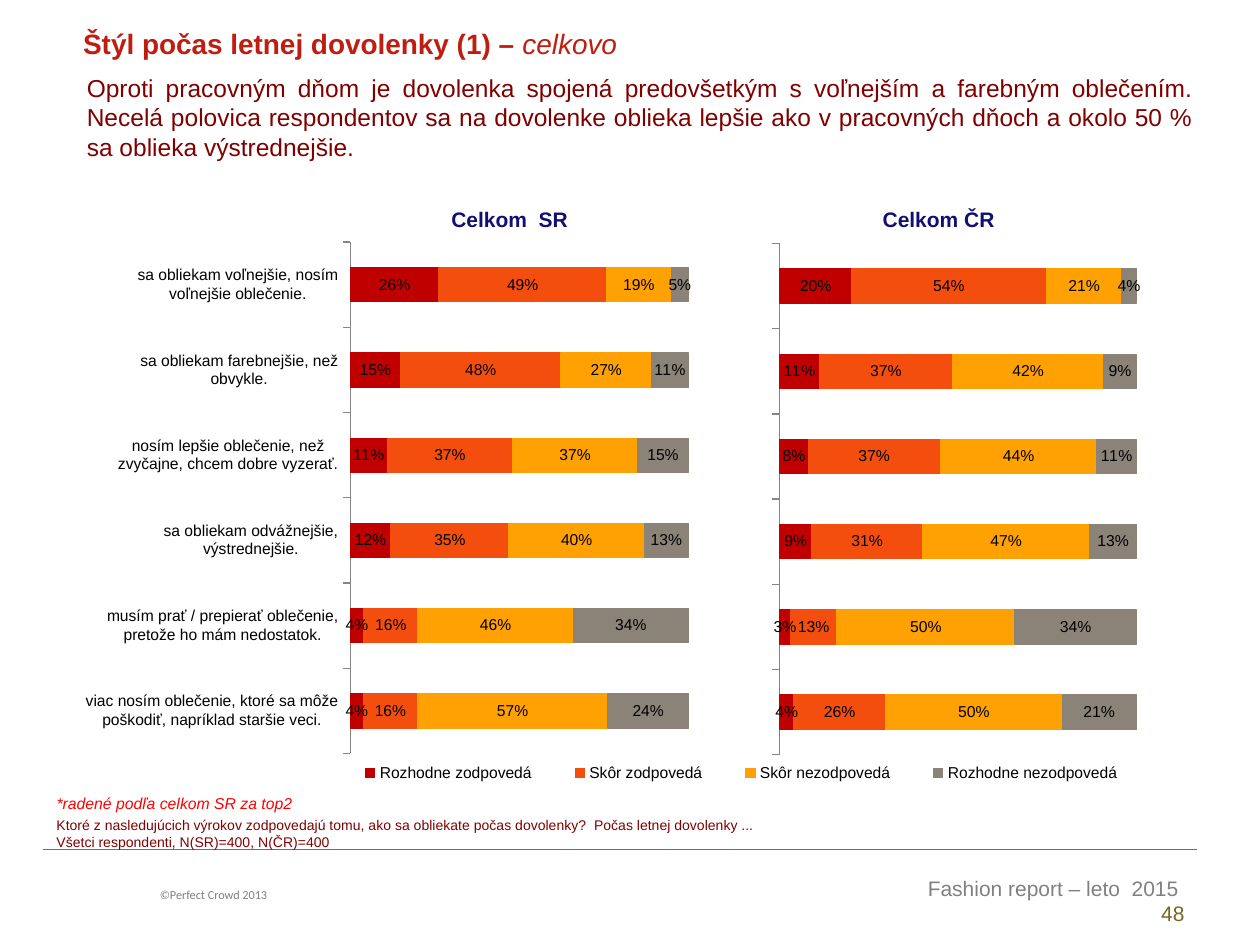
from lxml import etree
from pptx import Presentation
from pptx.chart.data import CategoryChartData
from pptx.dml.color import RGBColor
from pptx.enum.chart import (XL_CHART_TYPE, XL_LABEL_POSITION, XL_LEGEND_POSITION,
                             XL_TICK_LABEL_POSITION, XL_TICK_MARK)
from pptx.enum.shapes import MSO_CONNECTOR
from pptx.enum.text import MSO_ANCHOR, MSO_AUTO_SIZE, PP_ALIGN
from pptx.oxml.ns import qn
from pptx.util import Inches, Pt

LEFT, CENTER, RIGHT, JUSTIFY = (PP_ALIGN.LEFT, PP_ALIGN.CENTER,
                                PP_ALIGN.RIGHT, PP_ALIGN.JUSTIFY)

# Content: each paragraph is a list of (text, size, colour, style) runs
RED, MAROON, NAVY, GREY = "BE1E11", "800000", "120F71", "808080"
TITLE = [[("Štýl počas letnej dovolenky (1) – ", 16, RED, "b"),
          ("celkovo", 16, RED, "i")]]
SUMMARY = [[("Oproti pracovným dňom je dovolenka spojená predovšetkým s voľnejším a "
             "farebným oblečením. Necelá polovica respondentov sa na dovolenke oblieka "
             "lepšie ako v pracovných dňoch a okolo 50 % sa oblieka výstrednejšie.",
             14, MAROON, "")]]
SORT_NOTE = [[("*radené podľa celkom SR za top2", 9, "FF0000", "i")]]
QUESTION = [[("Ktoré z nasledujúcich výrokov zodpovedajú tomu, ako sa obliekate počas "
              "dovolenky?  Počas letnej dovolenky ...", 8, MAROON, "")],
            [("Všetci respondenti, N(SR)=400, N(ČR)=400", 8, MAROON, "")]]
COPYRIGHT = [[("©Perfect Crowd 2013", 7, GREY, "")]]
REPORT = [[("Fashion report – leto  2015 ", 12, GREY, "")],
          [("48", 12, "756522", "")]]

# (heading, column width, left margin)
HEADINGS = [("Celkom  SR", 1.69, 0.01), ("Celkom ČR", 3.26, 1.87)]
STATEMENTS = ["sa obliekam voľnejšie, nosím voľnejšie oblečenie.",
              "sa obliekam farebnejšie, než obvykle.",
              "nosím lepšie oblečenie, než zvyčajne, chcem dobre vyzerať.",
              "sa obliekam odvážnejšie, výstrednejšie.",
              "musím prať / prepierať oblečenie, pretože ho mám nedostatok.",
              "viac nosím oblečenie, ktoré sa môže poškodiť, napríklad staršie veci."]
# (answer, colour, SR values, ČR values)
ANSWERS = [
    ("Rozhodne zodpovedá", "C00000", (26, 15, 11, 12, 4, 4), (20, 11, 8, 9, 3, 4)),
    ("Skôr zodpovedá", "F34E0D", (49, 48, 37, 35, 16, 16), (54, 37, 37, 31, 13, 26)),
    ("Skôr nezodpovedá", "FFA102", (19, 27, 37, 40, 46, 57), (21, 42, 44, 47, 50, 50)),
    ("Rozhodne nezodpovedá", "8B8278", (5, 11, 15, 13, 34, 24), (4, 9, 11, 13, 34, 21)),
]


def color(value):
    return RGBColor.from_string(value)


def add_runs(para, runs, font="Arial"):
    for text, size, tint, style in runs:
        span = para.add_run()
        span.text = text
        span.font.name, span.font.size = font, Pt(size)
        span.font.color.rgb = color(tint)
        span.font.bold, span.font.italic = "b" in style, "i" in style


def fill_text(box, paragraphs, align=LEFT, font="Arial", wrap=True):
    frame = box.text_frame
    frame.auto_size = MSO_AUTO_SIZE.NONE
    frame.word_wrap, frame.vertical_anchor = wrap, MSO_ANCHOR.TOP
    for index, runs in enumerate(paragraphs):
        para = frame.add_paragraph() if index else frame.paragraphs[0]
        para.alignment = align
        add_runs(para, runs, font)


def add_text(page, place, paragraphs, **options):
    fill_text(page.shapes.add_textbox(*map(Inches, place)), paragraphs, **options)


def set_layout(parent, index, x, y, w, h, inner=False):
    """Place a plot area or legend by shares of its chart."""
    for old in parent.findall(qn("c:layout")):
        parent.remove(old)
    layout = etree.Element(qn("c:layout"))
    manual = etree.SubElement(layout, qn("c:manualLayout"))
    settings = [("layoutTarget", "inner")] if inner else []
    settings += [("xMode", "edge"), ("yMode", "edge"),
                 ("x", x), ("y", y), ("w", w), ("h", h)]
    for name, value in settings:
        etree.SubElement(manual, qn("c:" + name)).set("val", str(value))
    parent.insert(index, layout)


def add_bars(page, left, top, plot_width, column, labelled):
    data = CategoryChartData()
    data.categories = STATEMENTS
    for answer in ANSWERS:
        data.add_series(answer[0], answer[column])
    chart = page.shapes.add_chart(XL_CHART_TYPE.BAR_STACKED_100, Inches(left), Inches(top),
                                  Inches(9.22), Inches(4.54), data).chart
    chart.has_title = False
    chart.font.name, chart.font.size = "Arial", Pt(9)
    chart.font.color.rgb = color("000000")
    set_layout(chart._chartSpace.chart.plotArea, 0, 0.22, 0.027, plot_width, 0.894, True)

    axis = chart.category_axis
    axis.reverse_order = True
    axis.major_tick_mark = XL_TICK_MARK.OUTSIDE
    axis.format.line.color.rgb = color("868686")
    if not labelled:
        axis.tick_label_position = XL_TICK_LABEL_POSITION.NONE
    chart.value_axis.has_major_gridlines = False
    chart.value_axis.visible = False

    plot = chart.plots[0]
    plot.gap_width, plot.overlap, plot.vary_by_categories = 150, 100, False
    for series, answer in zip(plot.series, ANSWERS):
        tint = color(answer[1])
        series.format.fill.solid()
        series.format.fill.fore_color.rgb = tint
        series.format.line.color.rgb = tint
        series.format.line.width = Pt(0.75)
        labels = series.data_labels
        labels.show_value = True
        labels.position = XL_LABEL_POSITION.CENTER
        labels.number_format, labels.number_format_is_linked = '#,##0"%"', False

    chart.has_legend = labelled
    if labelled:
        chart.legend.position = XL_LEGEND_POSITION.BOTTOM
        chart.legend.include_in_layout = False
        set_layout(chart.legend._element, 1, 0.2, 0.92, 0.72, 0.07)


def add_headings(page):
    width = sum(heading[1] for heading in HEADINGS)
    frame = page.shapes.add_table(1, len(HEADINGS), Inches(3.2), Inches(1.57),
                                  Inches(width), Inches(0.34))
    table = frame.table
    table.first_row = table.horz_banding = False
    for index, (text, column_width, margin) in enumerate(HEADINGS):
        table.columns[index].width = Inches(column_width)
        cell = table.cell(0, index)
        cell.fill.background()
        cell.vertical_anchor = MSO_ANCHOR.MIDDLE
        cell.margin_left, cell.margin_right = Inches(margin), Inches(0.01)
        cell.margin_top, cell.margin_bottom = Inches(0.01), 0
        para = cell.text_frame.paragraphs[0]
        para.alignment = CENTER
        add_runs(para, [(text, 12, NAVY, "b")])


def main():
    deck = Presentation()
    deck.slide_width, deck.slide_height = Inches(10), Inches(7.5)
    page = deck.slides.add_slide(deck.slide_layouts[5])

    # Footer
    rule = page.shapes.add_connector(MSO_CONNECTOR.STRAIGHT, Inches(0.34), Inches(6.74),
                                     Inches(9.5), Inches(6.74))
    rule.line.color.rgb, rule.line.width = color("BF4C48"), Pt(0.75)
    etree.SubElement(rule._element.spPr, qn("a:effectLst"))
    add_text(page, (1.17, 6.99, 2.91, 0.22), COPYRIGHT, font="Calibri")
    add_text(page, (5.79, 6.9, 3.71, 0.5), REPORT, align=RIGHT)

    # Title and texts
    title = page.shapes.title
    title.left, title.top, title.width, title.height = map(Inches, (0.56, 0.16, 7.51, 0.37))
    fill_text(title, TITLE)
    add_text(page, (0.35, 6.43, 9.06, 0.37), QUESTION)
    add_text(page, (0.59, 0.53, 8.98, 0.81), SUMMARY, align=JUSTIFY)
    add_text(page, (0.35, 6.25, 2.12, 0.25), SORT_NOTE, wrap=False)

    # Charts for both countries
    add_headings(page)
    add_bars(page, 0.68, 1.8, 0.294, column=2, labelled=True)
    add_bars(page, 4.16, 1.81, 0.307, column=3, labelled=False)
    deck.save("out.pptx")


if __name__ == "__main__":
    main()
